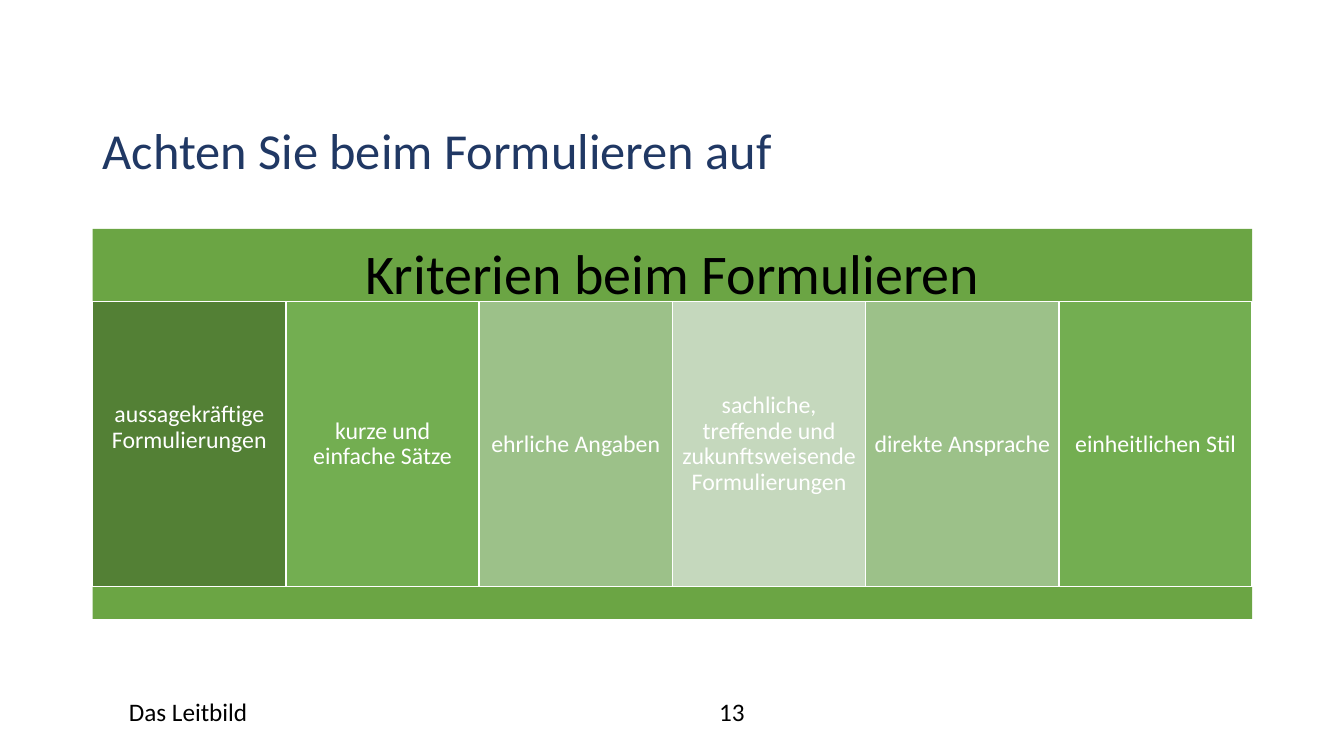
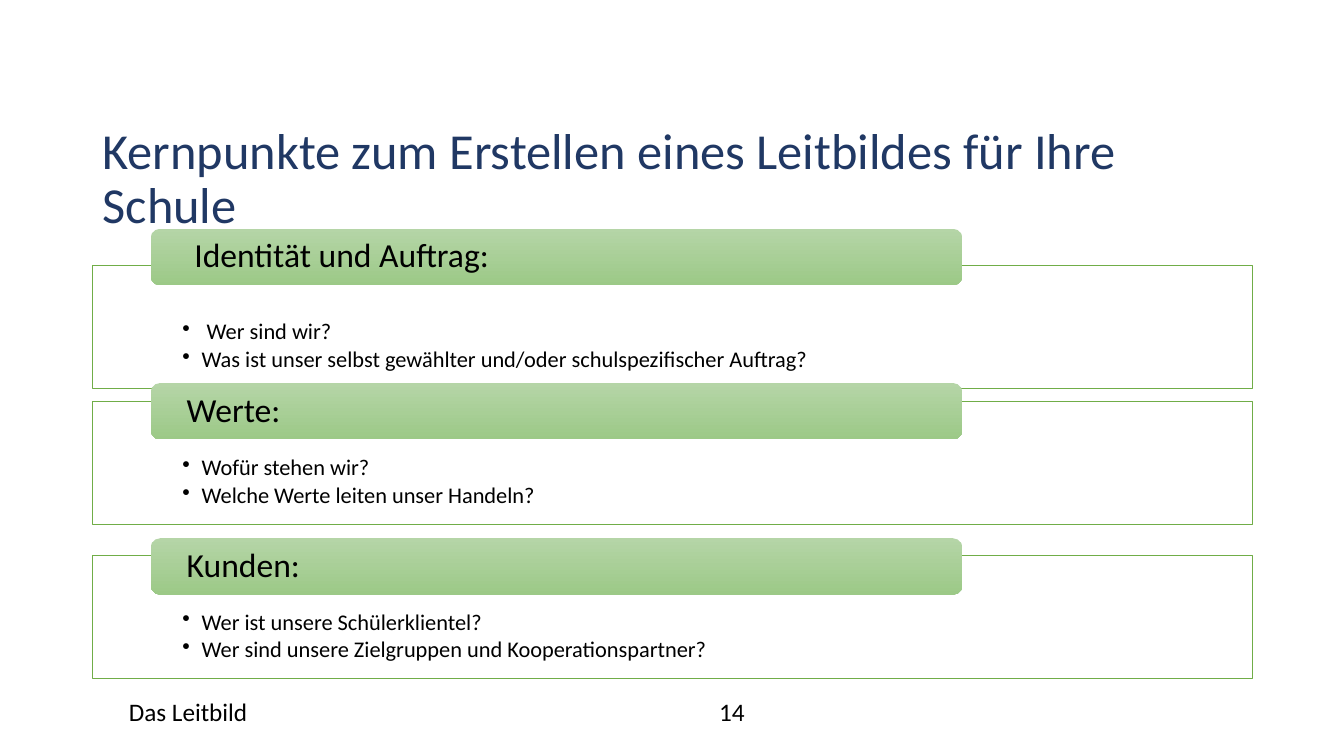
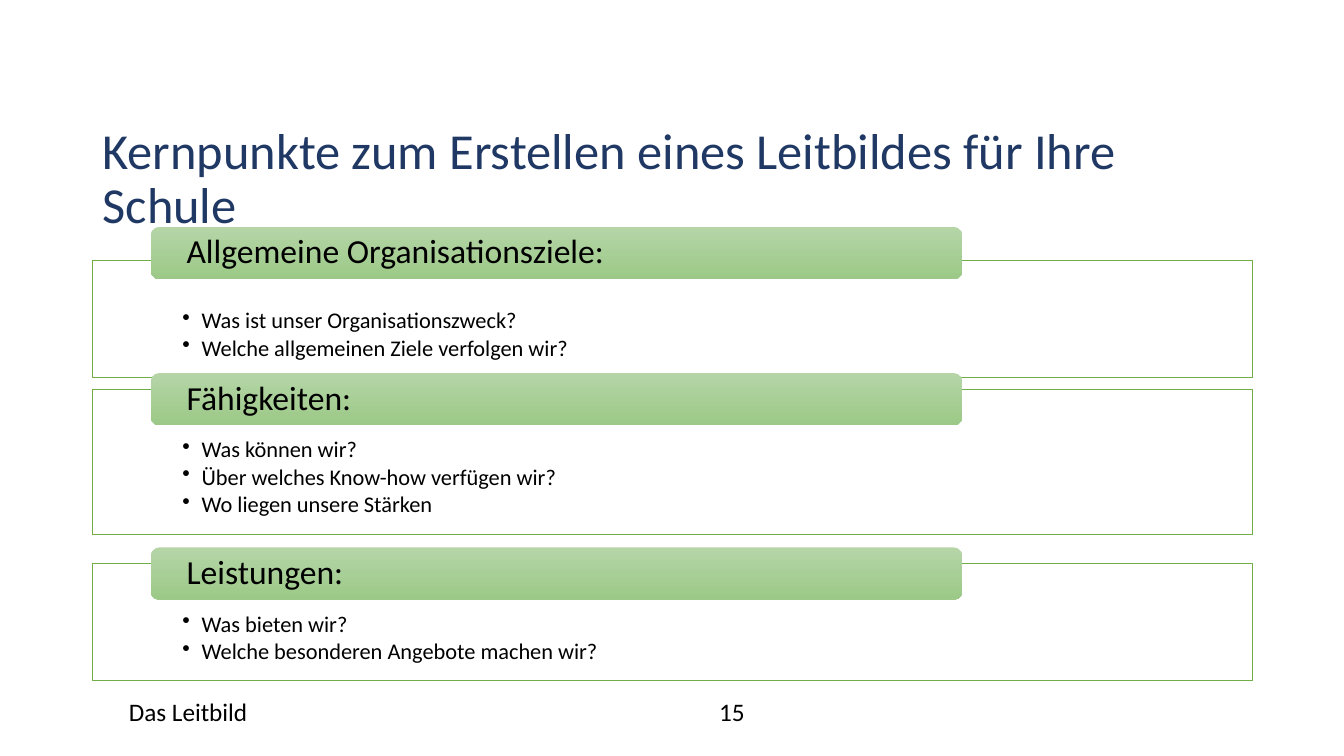
import pptx
import pptx.util
import pptx.dml.color
import pptx.enum.shapes
import pptx.enum.text
from lxml import etree

Inches, Pt = pptx.util.Inches, pptx.util.Pt
RGBColor = pptx.dml.color.RGBColor
SHAPE = pptx.enum.shapes.MSO_SHAPE
ALIGN = pptx.enum.text.PP_ALIGN
ANCHOR = pptx.enum.text.MSO_ANCHOR

FONT = "Calibri"
NAVY = RGBColor(0x20, 0x38, 0x64)
BLACK = RGBColor(0x00, 0x00, 0x00)
WHITE = RGBColor(0xFF, 0xFF, 0xFF)
BAND_GREEN = RGBColor(0x6B, 0xA5, 0x44)
DARK_GREEN = RGBColor(0x53, 0x80, 0x35)
MID_GREEN = RGBColor(0x73, 0xAE, 0x51)
SOFT_GREEN = RGBColor(0x9C, 0xC1, 0x89)
PALE_GREEN = RGBColor(0xC5, 0xD8, 0xBD)
LINE_GREEN = RGBColor(0x70, 0xAD, 0x47)
TAB_TOP = RGBColor(0xB5, 0xD5, 0xA7)
TAB_BOTTOM = RGBColor(0x9C, 0xC9, 0x87)

LEFT, BODY_W = 0.92, 11.5
BODY_TOP, PANEL_H = 2.27, 4.5
TAB_X, TAB_W = LEFT + 0.05 * BODY_W, 0.7 * BODY_W


def add_box(s, kind, x, y, w, h, fill=None, line=None, line_w=1):
    """Add a preset shape, or a text box when kind is None; lengths in inches."""
    at = [Inches(v) for v in (x, y, w, h)]
    if kind is None:
        return s.shapes.add_textbox(*at)
    sp = s.shapes.add_shape(kind, *at)
    sp.shadow.inherit = False
    if fill is not None:
        sp.fill.solid()
        sp.fill.fore_color.rgb = fill
    if line is None:
        sp.line.fill.background()
    else:
        sp.line.color.rgb = line
        sp.line.width = Pt(line_w)
    return sp


def write(sp, lines, size, color, align=ALIGN.LEFT, anchor=ANCHOR.TOP,
          insets=(0.1, 0.05, 0.1, 0.05), spacing=0.9, after=0, bullet=False):
    """Fill a shape with paragraphs; insets are left, top, right, bottom."""
    tf = sp.text_frame
    tf.word_wrap = True
    tf.vertical_anchor = anchor
    tf.margin_left, tf.margin_top, tf.margin_right, tf.margin_bottom = map(Inches, insets)
    tf.text = "\n".join(lines)
    for p in tf.paragraphs:
        p.alignment = align
        p.line_spacing = spacing
        p.space_after = Pt(after)
        if bullet:
            pPr = p._p.get_or_add_pPr()
            pPr.set("marL", str(Inches(0.19)))
            pPr.set("indent", str(-Inches(0.19)))
            etree.SubElement(pPr, pptx.oxml.ns.qn("a:buChar")).set("char", "•")
        for r in p.runs:
            r.font.name = FONT
            r.font.size = Pt(size)
            r.font.color.rgb = color


prs = pptx.Presentation()
prs.slide_width, prs.slide_height = Inches(13.33), Inches(7.5)

# Title and footer of every slide
CORE_TITLE = "Kernpunkte zum Erstellen eines Leitbildes für Ihre Schule"
slides = []
for number, title in enumerate(["Achten Sie beim Formulieren auf", CORE_TITLE, CORE_TITLE], 13):
    s = prs.slides.add_slide(prs.slide_layouts[6])
    write(add_box(s, None, LEFT, 1.2, BODY_W, 0.97), [title], 36, NAVY)
    write(add_box(s, None, 1.18, 6.86, 4.5, 0.4), ["Das Leitbild"], 18, BLACK, spacing=1)
    write(add_box(s, None, 5.76, 6.86, 3, 0.4), [str(number)], 18, BLACK, ALIGN.CENTER, spacing=1)
    slides.append(s)

# Criteria panel: header band, six columns, foot band
s = slides[0]
sp = add_box(s, SHAPE.RECTANGLE, LEFT, BODY_TOP, BODY_W, 0.21 * PANEL_H, BAND_GREEN)
write(sp, ["Kriterien beim Formulieren"], 40, BLACK, ALIGN.CENTER, ANCHOR.MIDDLE, (0.17,) * 4)

criteria = [
    ("aussagekräftige Formulierungen", DARK_GREEN, 0.4),
    ("kurze und einfache Sätze", MID_GREEN, 0.07),
    ("ehrliche Angaben", SOFT_GREEN, 0.07),
    ("sachliche, treffende und zukunftsweisende Formulierungen", PALE_GREEN, 0.07),
    ("direkte Ansprache", SOFT_GREEN, 0.07),
    ("einheitlichen Stil", MID_GREEN, 0.07),
]
col_w = BODY_W / len(criteria)
for i, (text, fill, bottom) in enumerate(criteria):
    sp = add_box(s, SHAPE.RECTANGLE, LEFT + i * col_w, BODY_TOP + 0.16 * PANEL_H,
                 col_w, 0.63 * PANEL_H, fill, WHITE)
    write(sp, [text], 17, WHITE, ALIGN.CENTER, ANCHOR.MIDDLE, (0.07, 0.07, 0.07, bottom))
add_box(s, SHAPE.RECTANGLE, LEFT, BODY_TOP + 0.79 * PANEL_H, BODY_W, 0.07 * PANEL_H, BAND_GREEN)

# Key points: tab height, text inset, then (tab top, box top, heading, questions)
key_points = [
    (0.56, 0.55, [
        (2.27, 2.63, " Identität und Auftrag:",
         [" Wer sind wir?", "Was ist unser selbst gewählter und/oder schulspezifischer Auftrag?"]),
        (3.8, 3.98, "Werte:", ["Wofür stehen wir?", "Welche Werte leiten unser Handeln?"]),
        (5.34, 5.51, "Kunden:",
         ["Wer ist unsere Schülerklientel?", "Wer sind unsere Zielgruppen und Kooperationspartner?"]),
    ]),
    (0.52, 0.49, [
        (2.25, 2.58, "Allgemeine Organisationsziele:",
         ["Was ist unser Organisationszweck?", "Welche allgemeinen Ziele verfolgen wir?"]),
        (3.7, 3.86, "Fähigkeiten:",
         ["Was können wir?", "Über welches Know-how verfügen wir?", "Wo liegen unsere Stärken"]),
        (5.43, 5.59, "Leistungen:",
         ["Was bieten wir?", "Welche besonderen Angebote machen wir?"]),
    ]),
]
for s, (tab_h, inset, sections) in zip(slides[1:], key_points):
    for tab_y, box_y, heading, questions in sections:
        box_h = inset + 0.11 + 0.28 * len(questions)
        sp = add_box(s, SHAPE.RECTANGLE, LEFT, box_y, BODY_W, box_h, WHITE, LINE_GREEN, 0.5)
        write(sp, questions, 16, BLACK, insets=(0.89, inset, 0.89, 0.12), after=2.4, bullet=True)

        tab = add_box(s, SHAPE.ROUNDED_RECTANGLE, TAB_X, tab_y, TAB_W, tab_h)
        tab.fill.gradient()
        tab.fill.gradient_angle = 270
        for stop, color in zip(tab.fill.gradient_stops, (TAB_TOP, TAB_BOTTOM)):
            stop.color.rgb = color
        write(tab, [heading], 24, BLACK, anchor=ANCHOR.MIDDLE, insets=(0.33, 0, 0.33, 0))

prs.save("out.pptx")
